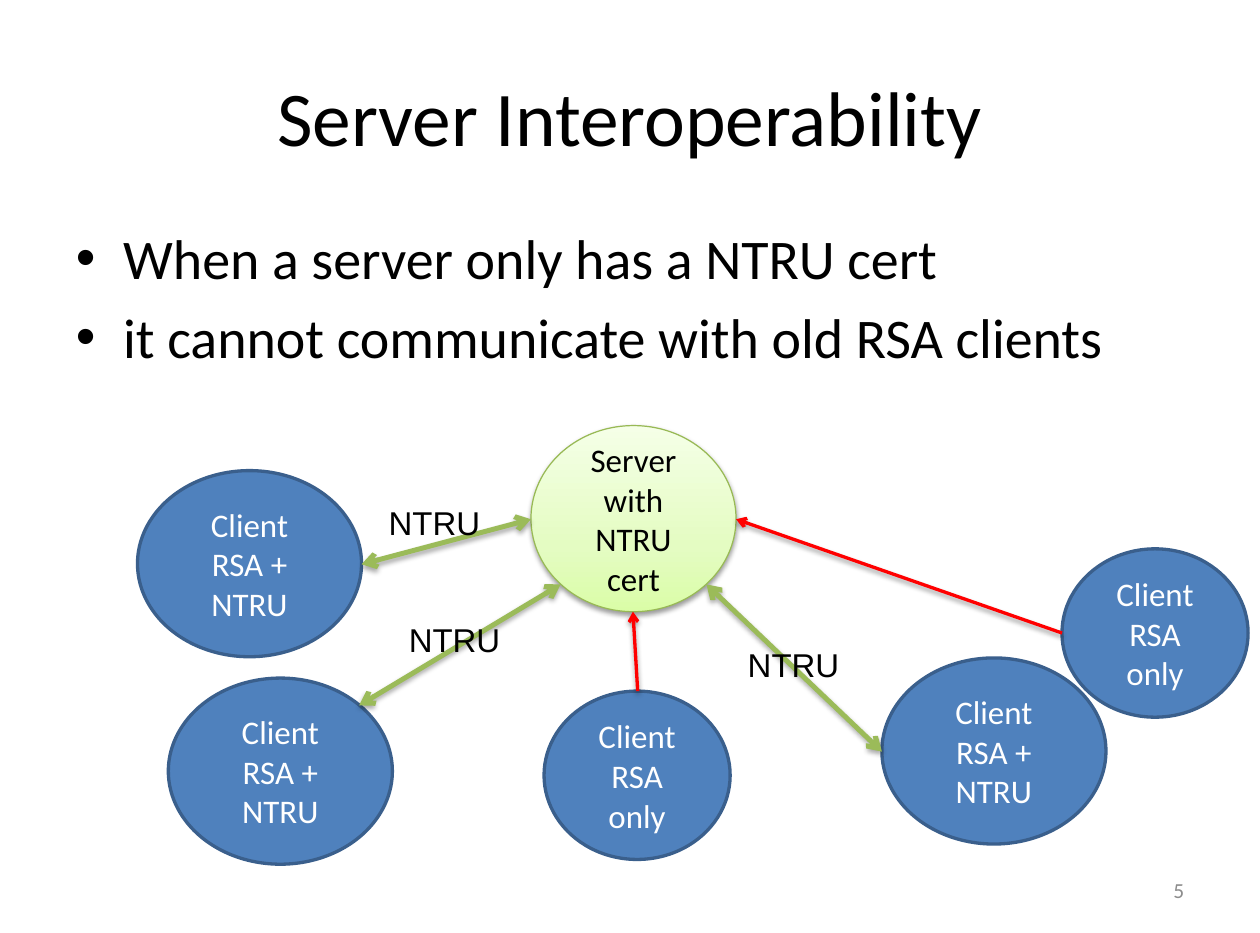
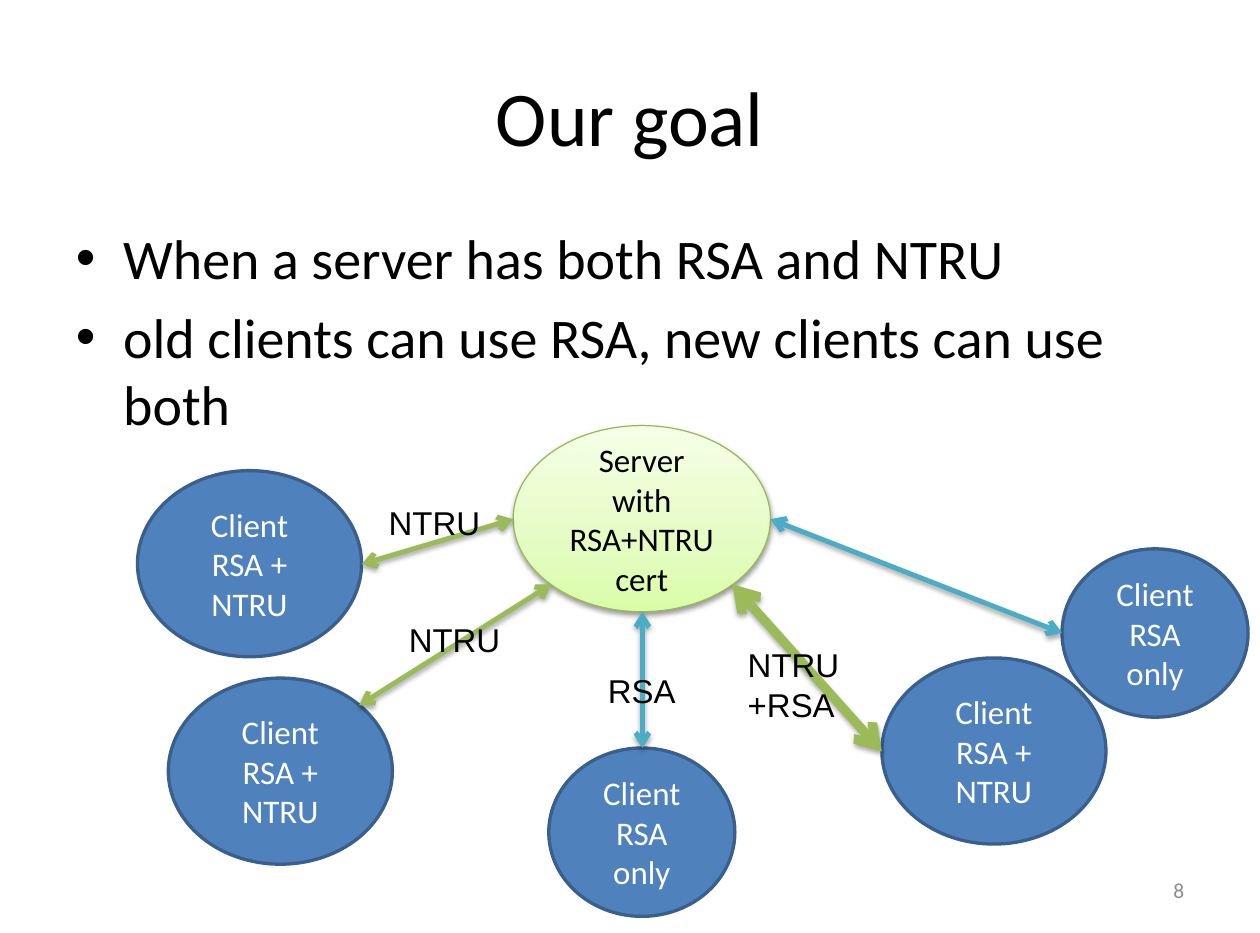
import math

import pptx
import pptx.dml.color
import pptx.enum.shapes
import pptx.enum.text
import pptx.oxml.ns
import pptx.util
from lxml import etree

PX = 9144  # EMU, 100 px to the inch
PT = 12700

BLACK, WHITE, GREY = "000000", "FFFFFF", "8C8C8C"
BLUE, BLUE_EDGE = "4F81BD", "3A5F8C"
GREEN, GREEN_EDGE = "9BBB59", "98B955"
RED, TEAL = "FF0000", "4BACC6"
SERVER_STOPS = ((0, "DAFDA7"), (35, "E4FCC2"), (100, "F5FFE7"))

# Direction of each contact point on an ellipse, in clockwise degrees
RIGHT, LOWER_RIGHT, BOTTOM, LOWER_LEFT = 0, 45, 90, 135
LEFT, TOP, UPPER_RIGHT = 180, 270, 315

ALIGN = pptx.enum.text.PP_ALIGN
ANCHOR = pptx.enum.text.MSO_ANCHOR


def color(hex_string):
    return pptx.dml.color.RGBColor.from_string(hex_string)


def add_xml(parent, tag, **attributes):
    return etree.SubElement(parent, pptx.oxml.ns.qn(tag), {k: str(v) for k, v in attributes.items()})


def contact(box, angle):
    """Point of the ellipse in box at the given angle, in px."""
    left, top, width, height = box
    turn = math.radians(angle)
    return (round(left + width / 2 * (1 + math.cos(turn))),
            round(top + height / 2 * (1 + math.sin(turn))))


class Deck:
    def __init__(self, width, height):
        self.prs = pptx.Presentation()
        self.prs.slide_width, self.prs.slide_height = width * PX, height * PX
        self.slide = None

    def new_slide(self, title, bullets, number):
        self.slide = self.prs.slides.add_slide(self.prs.slide_layouts[6])
        self.text((53, 32, 957, 131), [title], 47, align=ALIGN.CENTER, anchor=ANCHOR.MIDDLE)
        self.bullets((53, 184, 957, 519), bullets)
        self.text((762, 730, 248, 42), [str(number)], 13, GREY, align=ALIGN.RIGHT,
                  anchor=ANCHOR.MIDDLE)

    def fill_text(self, frame, lines, size, ink, font="Calibri", align=ALIGN.LEFT):
        frame.text = "\n".join(lines)
        for paragraph in frame.paragraphs:
            paragraph.alignment = align
            paragraph.font.size = pptx.util.Pt(size)
            paragraph.font.name = font
            paragraph.font.color.rgb = color(ink)

    def text(self, box, lines, size, ink=BLACK, align=ALIGN.LEFT, anchor=ANCHOR.TOP):
        frame = self.slide.shapes.add_textbox(*(n * PX for n in box)).text_frame
        frame.word_wrap = True
        frame.vertical_anchor = anchor
        frame.margin_left = frame.margin_right = 11 * PX
        frame.margin_top = frame.margin_bottom = 5 * PX
        self.fill_text(frame, lines, size, ink, align=align)
        return frame

    def bullets(self, box, lines):
        for paragraph in self.text(box, lines, 34).paragraphs:
            paragraph.space_before = pptx.util.Pt(7)
            properties = paragraph._p.get_or_add_pPr()
            properties.set("marL", str(40 * PX))
            properties.set("indent", str(-40 * PX))
            bullet_font = add_xml(properties, "a:buFont", typeface="Arial")
            bullet = add_xml(properties, "a:buChar", char="•")
            # The schema wants the bullet before the default run style
            run_style = properties.find(pptx.oxml.ns.qn("a:defRPr"))
            run_style.addprevious(bullet_font)
            run_style.addprevious(bullet)

    def label(self, left, top, width, lines):
        height = 11 + 33 * len(lines)
        frame = self.slide.shapes.add_textbox(left * PX, top * PX, width * PX, height * PX).text_frame
        frame.word_wrap = False
        frame.auto_size = pptx.enum.text.MSO_AUTO_SIZE.SHAPE_TO_FIT_TEXT
        self.fill_text(frame, lines, 20, BLACK, font="Arial")

    def shadow(self, effects, alpha, distance):
        outer = add_xml(effects, "a:outerShdw", blurRad=40000, dist=round(distance * PT),
                        dir=90 * 60000, rotWithShape=0)
        add_xml(add_xml(outer, "a:srgbClr", val=BLACK), "a:alpha", val=alpha * 1000)

    def ellipse(self, box, lines, ink, edge, edge_width):
        node = self.slide.shapes.add_shape(pptx.enum.shapes.MSO_SHAPE.OVAL, *(n * PX for n in box))
        node.shadow.inherit = False
        node.line.color.rgb = color(edge)
        node.line.width = pptx.util.Pt(edge_width)
        node.text_frame.word_wrap = True
        node.text_frame.vertical_anchor = ANCHOR.MIDDLE
        self.fill_text(node.text_frame, lines, 20, ink, align=ALIGN.CENTER)
        return node

    def client(self, box, lines):
        node = self.ellipse(box, lines, WHITE, BLUE_EDGE, 2)
        node.fill.solid()
        node.fill.fore_color.rgb = color(BLUE)

    def server(self, box, lines):
        node = self.ellipse(box, lines, BLACK, GREEN_EDGE, 0.75)
        node.fill.gradient()
        node.fill.gradient_angle = 90
        properties = node._element.spPr
        stops = properties.find(".//" + pptx.oxml.ns.qn("a:gsLst"))
        for stop in list(stops):
            stops.remove(stop)
        for position, shade in SERVER_STOPS:
            add_xml(add_xml(stops, "a:gs", pos=position * 1000), "a:srgbClr", val=shade)
        self.shadow(properties.find(pptx.oxml.ns.qn("a:effectLst")), 38, 1.6)

    def link(self, start, end, ink, width, two_way=True):
        link = self.slide.shapes.add_connector(
            pptx.enum.shapes.MSO_CONNECTOR.STRAIGHT, *(n * PX for n in start + end))
        link.line.color.rgb = color(ink)
        link.line.width = pptx.util.Pt(width)
        properties = link._element.spPr
        line = properties.find(pptx.oxml.ns.qn("a:ln"))
        if two_way:
            add_xml(line, "a:headEnd", type="arrow")
        add_xml(line, "a:tailEnd", type="arrow")
        alpha, distance = (35, 1.8) if two_way else (38, 1.6)
        self.shadow(add_xml(properties, "a:effectLst"), alpha, distance)


def network(deck, server, server_lines, old_client, old_style, right_width, right_label):
    """Server among three new clients and two old ones, with their links."""
    new_left, new_low, new_right = ((left, top, 189, 157)
                                    for left, top in ((116, 397), (142, 572), (744, 555)))
    old_right = (896, 463, 157, 142)

    deck.server(server, server_lines)
    for box in (old_right, old_client):
        deck.client(box, ["Client", "RSA only"])
    for box in (new_left, new_low, new_right):
        deck.client(box, ["Client RSA + NTRU"])

    new_style = (GREEN, 3)
    for client, client_side, server_side, style in (
            (new_right, LEFT, LOWER_RIGHT, (GREEN, right_width)),
            (old_right, LEFT, RIGHT, old_style),
            (old_client, TOP, BOTTOM, old_style),
            (new_low, UPPER_RIGHT, LOWER_LEFT, new_style),
            (new_left, RIGHT, LEFT, new_style)):
        deck.link(contact(client, client_side), contact(server, server_side), *style)

    for left, top, lines in ((318, 419, ["NTRU"]), (335, 518, ["NTRU"]), (621, 539, right_label)):
        deck.label(left, top, 98, lines)


def main():
    deck = Deck(1063, 787)

    deck.new_slide("Server Interoperability",
                   ["When a server only has a NTRU cert",
                    "it cannot communicate with old RSA clients"], 5)
    network(deck, (448, 359, 173, 157), ["Server", "with NTRU cert"],
            (459, 583, 157, 142), (RED, 2, False), 3, ["NTRU"])

    deck.new_slide("Our goal",
                   ["When a server has both RSA and NTRU",
                    "old clients can use RSA, new clients can use both"], 8)
    network(deck, (433, 359, 217, 157), ["Server", "with RSA+NTRU cert"],
            (463, 631, 157, 142), (TEAL, 3), 5.5, ["NTRU", "+RSA"])
    deck.label(503, 561, 78, ["RSA"])

    deck.prs.save("out.pptx")


if __name__ == "__main__":
    main()
